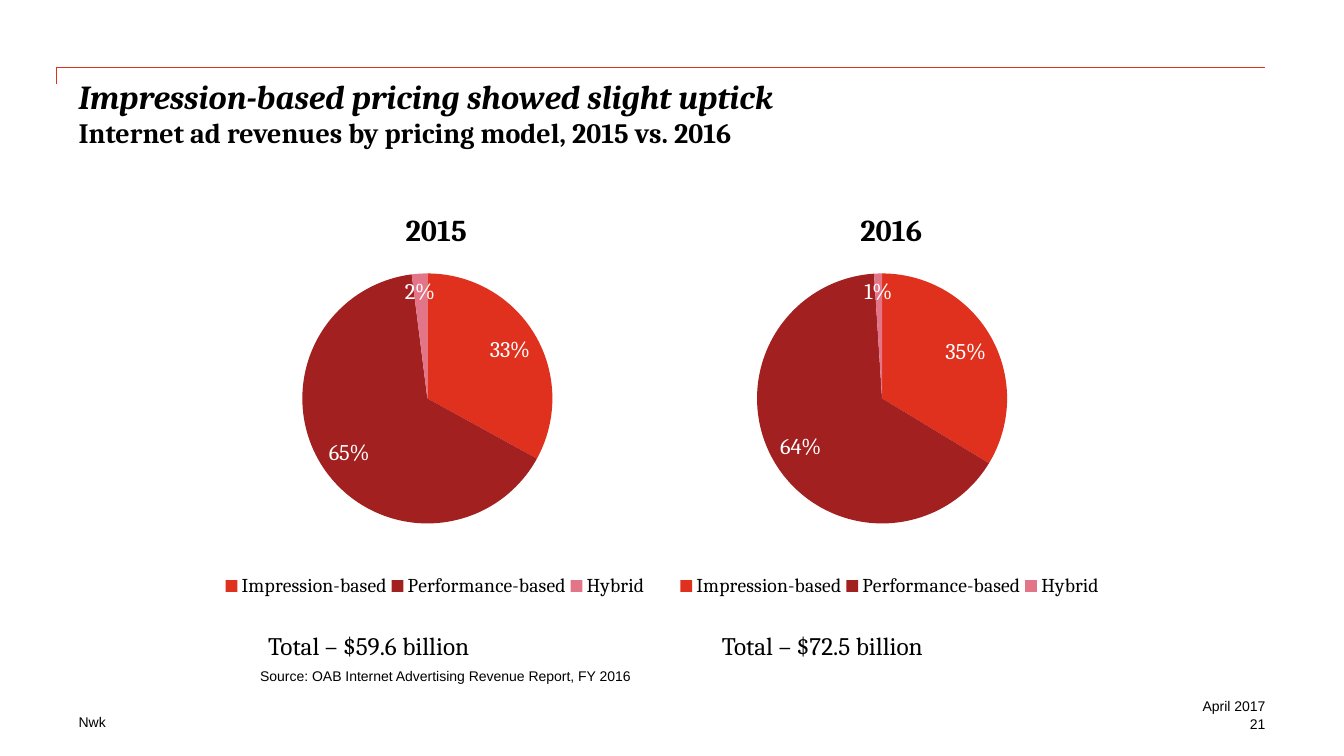
from lxml import etree
from pptx import Presentation
from pptx import util as u
from pptx.chart.data import CategoryChartData
from pptx.dml.color import RGBColor
from pptx.enum import chart as charts, text
from pptx.oxml.ns import qn

color = RGBColor.from_string
RED, DARK_RED, PINK, BLACK, WHITE = "E0301E", "A32020", "E27588", "000000", "FFFFFF"
SERIF, SANS = "Cambria", "Arial"
MARGIN, RIGHT = 0.78, 12.55
FIRST_CHART, COLUMN = 2.15, 4.51
CHART_TOP, CHART_WIDTH, CHART_HEIGHT = 1.82, 4.33, 4.25


def write_text(shape, lines, font=SANS, align=text.PP_ALIGN.LEFT,
               anchor=text.MSO_ANCHOR.TOP):
    """Fill one paragraph; each line is (words, size, bold, italic)."""
    frame = shape.text_frame
    frame.word_wrap = True
    frame.auto_size = text.MSO_AUTO_SIZE.NONE
    frame.vertical_anchor = anchor
    frame.margin_left = frame.margin_right = frame.margin_top = frame.margin_bottom = 0
    paragraph = frame.paragraphs[0]
    paragraph.alignment = align
    for number, (words, size, bold, italic) in enumerate(lines):
        if number:
            paragraph.add_line_break()
        run = paragraph.add_run()
        run.text = words
        run.font.name, run.font.size = font, u.Pt(size)
        run.font.bold, run.font.italic = bold, italic
        run.font.color.rgb = color(BLACK)


def place_chart_part(part, index, **shares):
    """Give a chart part a manual layout in shares of the chart's size."""
    for old in part.findall(qn("c:layout")):
        part.remove(old)
    layout = etree.Element(qn("c:layout"))
    manual = etree.SubElement(layout, qn("c:manualLayout"))
    if index == 0:
        etree.SubElement(manual, qn("c:layoutTarget"), val="inner")
    for axis in ("x", "y"):
        etree.SubElement(manual, qn(f"c:{axis}Mode"), val="edge")
    for name, share in shares.items():
        etree.SubElement(manual, qn(f"c:{name}"), val=str(share))
    part.insert(index, layout)


presentation = Presentation()
presentation.slide_width, presentation.slide_height = u.Inches(13.33), u.Inches(7.5)
slide = presentation.slides.add_slide(presentation.slide_layouts[5])

# Header rule and title
builder = slide.shapes.build_freeform(u.Inches(0.56), u.Inches(0.83))
builder.add_line_segments(
    [(u.Inches(0.56), u.Inches(0.67)), (u.Inches(RIGHT), u.Inches(0.67))], close=False)
rule = builder.convert_to_shape()
rule.shadow.inherit = False
rule.fill.background()
rule.line.color.rgb = color(RED)
rule.line.width = u.Pt(1)

title = slide.shapes.title
title.left, title.top = u.Inches(MARGIN), u.Inches(0.75)
title.width, title.height = u.Inches(RIGHT - MARGIN), u.Inches(1)
write_text(title, [
    ("Impression-based pricing showed slight uptick", 24, True, True),
    ("Internet ad revenues by pricing model, 2015 vs. 2016", 20, True, False),
], SERIF)

# One pie per year
pies = [
    ("2015", "2015", (0.33, 0.65, 0.02), None),
    ("2016", "Series 1", (0.33, 0.64, 0.01), "35%"),
]
for column, (year, series_name, values, first_label) in enumerate(pies):
    data = CategoryChartData(number_format="0%")
    data.categories = ["Impression-based", "Performance-based", "Hybrid"]
    data.add_series(series_name, values)
    chart = slide.shapes.add_chart(
        charts.XL_CHART_TYPE.PIE, u.Inches(FIRST_CHART + column * COLUMN),
        u.Inches(CHART_TOP), u.Inches(CHART_WIDTH), u.Inches(CHART_HEIGHT), data).chart
    chart.font.name, chart.font.size = SANS, u.Pt(18)
    chart.font.color.rgb = color(BLACK)

    chart.has_title = True
    heading = chart.chart_title.text_frame.paragraphs[0].add_run()
    heading.text = year
    heading.font.name, heading.font.size, heading.font.bold = SERIF, u.Pt(21.6), True
    heading.font.color.rgb = color(BLACK)

    chart.has_legend = True
    legend = chart.legend
    legend.position = charts.XL_LEGEND_POSITION.BOTTOM
    legend.include_in_layout = False
    legend.font.name, legend.font.size = SERIF, u.Pt(14)
    legend.font.color.rgb = color(BLACK)

    plot = chart.plots[0]
    plot.vary_by_categories = True
    series = plot.series[0]
    for number, fill in enumerate((RED, DARK_RED, PINK)):
        point = series.points[number]
        point.format.fill.solid()
        point.format.fill.fore_color.rgb = color(fill)

    labels = series.data_labels
    labels.show_value = True
    labels.number_format, labels.number_format_is_linked = "0%", False
    labels.position = charts.XL_LABEL_POSITION.INSIDE_END
    label_fonts = [labels.font]
    if first_label:
        label = series.points[0].data_label
        label_run = label.text_frame.paragraphs[0].add_run()
        label_run.text = first_label
        label.position = charts.XL_LABEL_POSITION.INSIDE_END
        label_fonts.append(label_run.font)
    for font in label_fonts:
        font.name, font.size = SERIF, u.Pt(16)
        font.color.rgb = color(WHITE)

    chart_root = chart.element
    place_chart_part(chart_root.find(".//" + qn("c:plotArea")), 0,
                     x=0.196, y=0.21, w=0.573, h=0.584)
    place_chart_part(chart_root.find(".//" + qn("c:title")), 1, x=0.42, y=0.05)
    place_chart_part(chart_root.find(".//" + qn("c:legend")), 1,
                     x=0.01, y=0.9, w=0.98, h=0.08)

# Totals, source and footer
left, right = text.PP_ALIGN.LEFT, text.PP_ALIGN.RIGHT
top, bottom = text.MSO_ANCHOR.TOP, text.MSO_ANCHOR.BOTTOM
notes = [
    ("Total – $59.6 billion", 2.66, 6.25, 3.5, 0.67, 18, SERIF, left, top),
    ("Total – $72.5 billion", 7.16, 6.25, 3.5, 0.67, 18, SERIF, left, top),
    ("Source: OAB Internet Advertising Revenue Report, FY 2016",
     2.58, 6.62, 5.75, 0.17, 10, SANS, left, bottom),
    ("Nwk", MARGIN, 7.08, 3.78, 0.17, 10, SANS, left, top),
    ("April 2017", 10.33, 6.92, 2.22, 0.17, 10, SANS, right, top),
    ("21", 10.33, 7.1, 2.22, 0.17, 10, SANS, right, top),
]
for words, x, y, width, height, size, font, align, anchor in notes:
    box = slide.shapes.add_textbox(*map(u.Inches, (x, y, width, height)))
    write_text(box, [(words, size, False, False)], font, align, anchor)

presentation.save("out.pptx")
